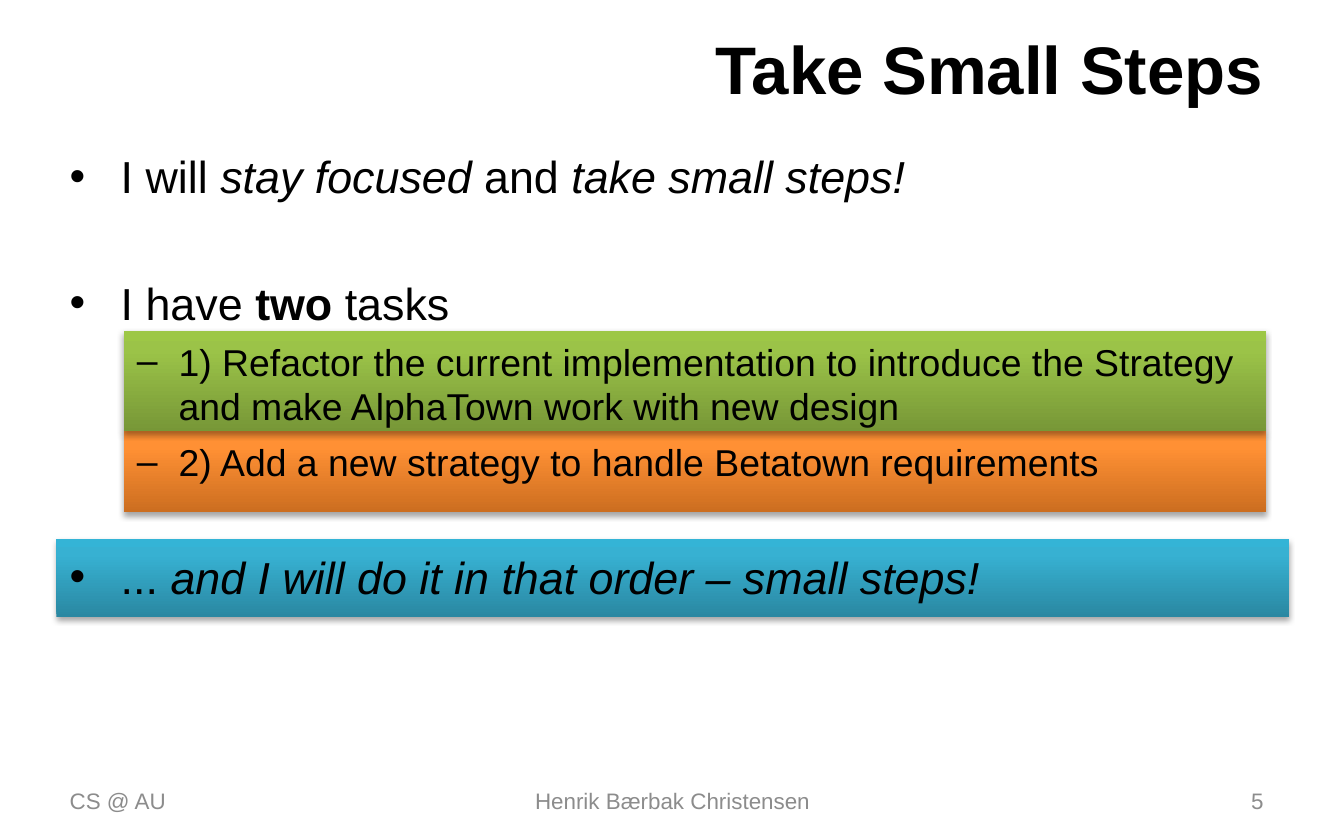
from dataclasses import dataclass

from lxml.etree import SubElement
from pptx import Presentation
from pptx.dml.color import RGBColor
from pptx.enum.shapes import MSO_SHAPE
from pptx.enum.text import MSO_ANCHOR, PP_ALIGN
from pptx.oxml.ns import qn
from pptx.util import Inches, Pt


@dataclass(frozen=True)
class Theme:
    font: str = "Arial"
    text: str = "000000"
    muted: str = "8C8C8C"
    shadow: str = "000000"
    green: tuple = ("779737", "9BC348", "9DC746")
    orange: tuple = ("CC6E20", "FF9034", "FF9136")
    blue: tuple = ("2A88A2", "37B1D2", "34B4D6")
    title_size: int = 36
    body_sizes: tuple = (24, 20)
    footer_size: int = 12


THEME = Theme()

# Bullet character, left margin and hanging indent of each level
LEVELS = (("•", 0.38, 0.38), ("–", 0.81, 0.31))

# Level, space before, (text, style) pieces
POINTS = (
    (0, 0, (("I will ", ""), ("stay focused", "i"), (" and ", ""),
            ("take small steps!", "i"))),
    (0, 39, (("I have ", ""), ("two", "b"), (" tasks", ""))),
    (1, 5, (("1) Refactor the current implementation to introduce the Strategy "
             "and make AlphaTown work with new design", ""),)),
    (1, 6, (("2) Add a new strategy to handle Betatown requirements", ""),)),
    (0, 35, (("... ", ""), ("and I will do it in that order – small steps!", "i"))),
)


def set_font(paragraph, size, color, bold=None):
    font = paragraph.font
    font.name = THEME.font
    font.size = Pt(size)
    font.bold = bold
    font.color.rgb = RGBColor.from_string(color)


def add_band(slide, left, top, width, height, colors):
    """Add a rectangle with a bottom-to-top gradient and a soft shadow."""
    band = slide.shapes.add_shape(
        MSO_SHAPE.RECTANGLE, Inches(left), Inches(top), Inches(width), Inches(height))
    band.line.fill.background()
    band.fill.gradient()
    band.fill.gradient_angle = 90

    # Three gradient stops
    properties = band.element.spPr
    stops = properties.find(qn("a:gradFill")).find(qn("a:gsLst"))
    for stop in list(stops):
        stops.remove(stop)
    for position, color in zip((0, 80, 100), colors):
        stop = SubElement(stops, qn("a:gs"), pos=str(position * 1000))
        SubElement(stop, qn("a:srgbClr"), val=color)

    # Shadow straight below
    band.shadow.inherit = False
    shadow = SubElement(
        properties.find(qn("a:effectLst")), qn("a:outerShdw"),
        blurRad=str(Pt(3.1)), dist=str(Pt(1.8)), dir="5400000", rotWithShape="0")
    shadow_color = SubElement(shadow, qn("a:srgbClr"), val=THEME.shadow)
    SubElement(shadow_color, qn("a:alpha"), val="35000")


def add_text_frame(slide, left, top, width, height, anchor):
    box = slide.shapes.add_textbox(
        Inches(left), Inches(top), Inches(width), Inches(height))
    frame = box.text_frame
    frame.word_wrap = True
    frame.vertical_anchor = anchor
    return frame


def add_label(slide, left, top, width, height, text, align, size, color, bold=None):
    frame = add_text_frame(slide, left, top, width, height, MSO_ANCHOR.MIDDLE)
    paragraph = frame.paragraphs[0]
    paragraph.text = text
    paragraph.alignment = align
    set_font(paragraph, size, color, bold)


def set_bullet(paragraph, level):
    character, margin, hanging = LEVELS[level]
    paragraph.level = level
    properties = paragraph._p.get_or_add_pPr()
    properties.set("marL", str(Inches(margin)))
    properties.set("indent", str(-Inches(hanging)))
    SubElement(properties, qn("a:buFont"), typeface=THEME.font)
    SubElement(properties, qn("a:buChar"), char=character)


def add_points(slide, left, top, width, height):
    frame = add_text_frame(slide, left, top, width, height, MSO_ANCHOR.TOP)
    for index, (level, space, pieces) in enumerate(POINTS):
        paragraph = frame.add_paragraph() if index else frame.paragraphs[0]
        set_bullet(paragraph, level)
        paragraph.space_before = Pt(space)
        set_font(paragraph, THEME.body_sizes[level], THEME.text)
        for text, style in pieces:
            run = paragraph.add_run()
            run.text = text
            if style == "i":
                run.font.italic = True
            elif style == "b":
                run.font.bold = True


def main():
    presentation = Presentation()
    presentation.slide_width = Inches(10)
    presentation.slide_height = Inches(6.25)
    slide = presentation.slides.add_slide(presentation.slide_layouts[6])

    # Coloured bands behind the tasks and the conclusion
    add_band(slide, 0.92, 3.21, 8.5, 0.6, THEME.orange)
    add_band(slide, 0.92, 2.46, 8.5, 0.75, THEME.green)
    add_band(slide, 0.42, 4.01, 9.17, 0.58, THEME.blue)

    # Title and bullet points
    add_label(slide, 0.5, 0.18, 9, 0.65, "Take Small Steps", PP_ALIGN.RIGHT,
              THEME.title_size, THEME.text, bold=True)
    add_points(slide, 0.42, 1.06, 9.08, 4.7)

    # Footer
    for left, width, text, align in (
        (0.42, 2.33, "CS @ AU", PP_ALIGN.LEFT),
        (3.42, 3.17, "Henrik Bærbak Christensen", PP_ALIGN.CENTER),
        (7.17, 2.33, "5", PP_ALIGN.RIGHT),
    ):
        add_label(slide, left, 5.79, width, 0.33, text, align,
                  THEME.footer_size, THEME.muted)

    presentation.save("out.pptx")


if __name__ == "__main__":
    main()
